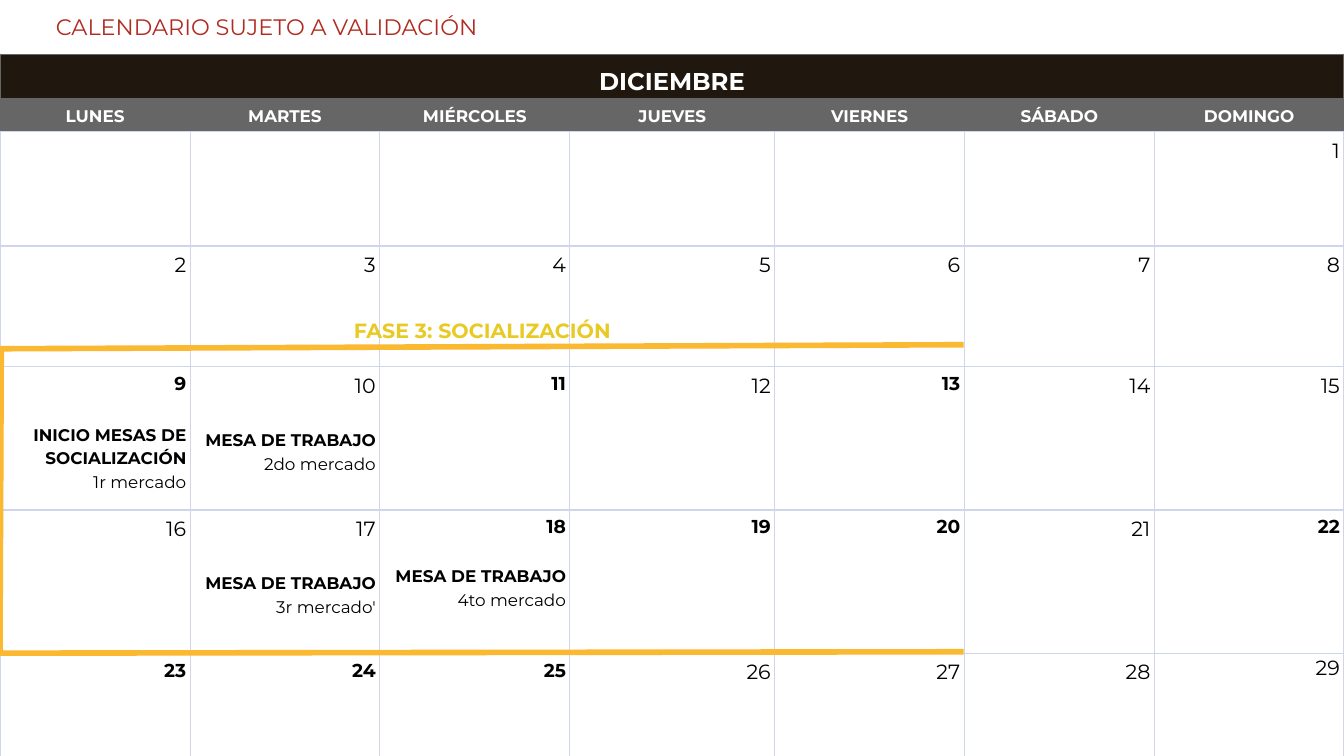
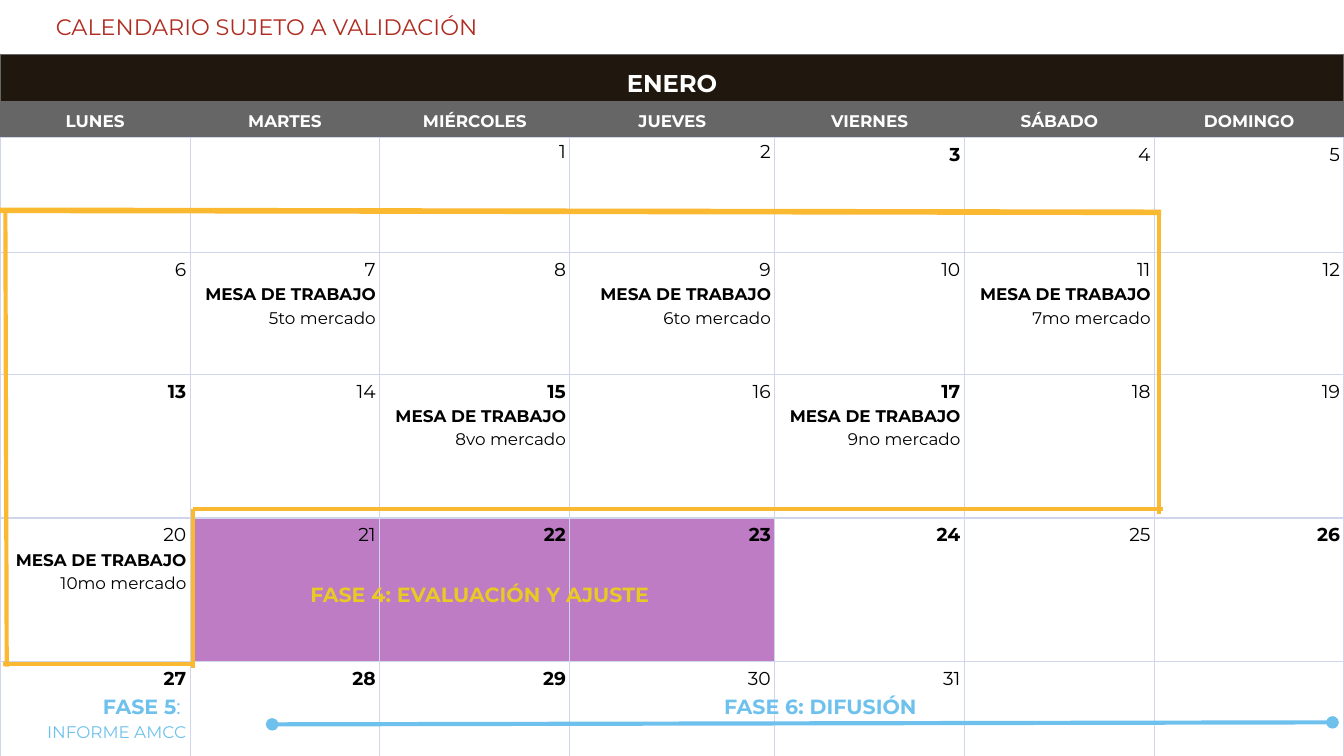
"""Build two monthly calendar slides with phase outlines and labels."""
from lxml import etree
from pptx import Presentation
from pptx.dml.color import RGBColor
from pptx.enum.shapes import MSO_CONNECTOR
from pptx.enum.text import MSO_ANCHOR, PP_ALIGN
from pptx.oxml.ns import qn
from pptx.util import Pt

PX = 4572
WIDTH, HEIGHT = 2000, 1125
FONT = "Montserrat"
CENTER, RIGHT = PP_ALIGN.CENTER, PP_ALIGN.RIGHT
TOP, MIDDLE, BOTTOM = MSO_ANCHOR.TOP, MSO_ANCHOR.MIDDLE, MSO_ANCHOR.BOTTOM
STRAIGHT = MSO_CONNECTOR.STRAIGHT
COLORS = {
    "black": "000000", "white": "FFFFFF", "month": "20180E", "gray": "666666",
    "grid": "CFD5EA", "orange": "FBB831", "yellow": "E9C924", "blue": "6EC1ED",
    "purple": "BD7CC3", "red": "B02B20",
}
STYLES = {
    "title": (12, False, "red"),
    "month": (13, True, "white"),
    "weekday": (9, True, "white"),
    "event": (9, True, "black"),
    "detail": (9, False, "black"),
    "phase": (11, True, "yellow"),
    "phase_blue": (11, True, "blue"),
    "colon_blue": (11, False, "blue"),
    "detail_blue": (9, False, "blue"),
}
WEEKDAYS = ["LUNES", "MARTES", "MIÉRCOLES", "JUEVES", "VIERNES", "SÁBADO", "DOMINGO"]
COL_WIDTHS = [283, 282, 283, 305, 282, 283, 282]
MESA = ("MESA DE TRABAJO", "event")

december_notes = {
    9: (14, [[("INICIO MESAS DE SOCIALIZACIÓN", "event")], [("1r mercado", "detail")]]),
    10: (15.4, [[("MESA DE TRABAJO ", "event"), ("2do mercado", "detail")]]),
    17: (15.4, [[MESA], [("3r mercado'", "detail")]]),
    18: (13, [[MESA], [("4to mercado", "detail")]]),
}
january_markets = {7: "5to", 9: "6to", 11: "7mo", 15: "8vo", 17: "9no", 20: "10mo"}
january_notes = {
    day: (0, [[MESA], [(f"{nth} mercado", "detail")]])
    for day, nth in january_markets.items()
}
january_notes[27] = (0, [
    [("FASE 5", "phase_blue"), (": ", "colon_blue")],
    [("INFORME AMCC", "detail_blue")],
])

MONTHS = [
    {
        "name": "DICIEMBRE", "first_col": 6, "days": 29, "day_size": 11,
        "rows": [66, 49, 170, 180, 213, 213, 180],
        "bold": {9, 11, 13, 18, 19, 20, 22, 23, 24, 25},
        "single": {29}, "shaded": set(), "notes": december_notes,
        "outline": [(1434, 513), (2, 519), (0, 972), (1434, 970)],
        "lines": [],
        "labels": [("FASE 3: SOCIALIZACIÓN", "phase", 311, 455)],
    },
    {
        "name": "ENERO", "first_col": 2, "days": 31, "day_size": 10,
        "rows": [70, 54, 171, 181, 214, 214, 196],
        "bold": {3, 13, 15, 17, 22, 23, 24, 26, 27, 28, 29},
        "single": {1, 2}, "shaded": {21, 22, 23}, "notes": january_notes,
        "outline": [],
        "lines": [
            (0, 313, 1728, 316, "orange", 3, False),
            (287, 758, 1730, 758, "orange", 2.25, False),
            (8, 312, 10, 992, "orange", 2.25, False),
            (4, 988, 286, 988, "orange", 2.25, False),
            (287, 994, 287, 758, "orange", 2.25, False),
            (1725, 312, 1725, 765, "orange", 2.25, False),
            (405, 1078, 1983, 1075, "blue", 2.25, True),
        ],
        "labels": [
            ("FASE 4: EVALUACIÓN Y AJUSTE", "phase", 307, 847),
            ("FASE 6: DIFUSIÓN", "phase_blue", 814, 1015),
        ],
    },
]


def rgb(name):
    return RGBColor.from_string(COLORS[name])


def write(p, runs, align, spacing=1.15):
    p.alignment = align
    p.line_spacing = spacing
    for text, style in runs:
        size, bold, color = STYLES.get(style, style)
        r = p.add_run()
        r.text = text
        r.font.name = FONT
        r.font.size = Pt(size)
        r.font.bold = bold
        r.font.color.rgb = rgb(color)


prs = Presentation()
prs.slide_width = WIDTH * PX
prs.slide_height = HEIGHT * PX

for month in MONTHS:
    s = prs.slides.add_slide(prs.slide_layouts[6])

    rows = month["rows"]
    frame = s.shapes.add_table(len(rows), 7, 0, 81 * PX, WIDTH * PX, sum(rows) * PX)
    table = frame.table
    table.first_row = False
    table.horz_banding = False
    for col, width in zip(table.columns, COL_WIDTHS):
        col.width = width * PX
    for row, height in zip(table.rows, rows):
        row.height = height * PX
    table.cell(0, 0).merge(table.cell(0, 6))

    for i in range(len(rows)):
        for j in range(7):
            cell = table.cell(i, j)
            cell.margin_left = cell.margin_right = 6 * PX
            cell.margin_top = cell.margin_bottom = 4 * PX
            cell.vertical_anchor = (BOTTOM, MIDDLE)[i] if i < 2 else TOP
            for side in ("lnL", "lnR", "lnT", "lnB"):
                gray = i == 0 or (i == 1 and side != "lnB")
                ln = etree.SubElement(cell._tc.get_or_add_tcPr(), qn(f"a:{side}"), w=str(Pt(0.75)))
                fill = etree.SubElement(ln, qn("a:solidFill"))
                etree.SubElement(fill, qn("a:srgbClr"), val=COLORS["gray" if gray else "grid"])

            day = (i - 2) * 7 + j - month["first_col"] + 1
            if i < 2 or day in month["shaded"]:
                cell.fill.solid()
                cell.fill.fore_color.rgb = rgb(("month", "gray")[i] if i < 2 else "purple")
            else:
                cell.fill.background()

            tf = cell.text_frame
            p = tf.paragraphs[0]
            if i == 0:
                if j == 0:
                    write(p, [(month["name"], "month")], CENTER)
            elif i == 1:
                write(p, [(WEEKDAYS[j], "weekday")], CENTER)
            elif 1 <= day <= month["days"]:
                bold = day in month["bold"]
                style = (10 if bold else month["day_size"], bold, "black")
                write(p, [(str(day), style)], RIGHT, 1.0 if day in month["single"] else 1.15)
                gap, paragraphs = month["notes"].get(day, (0, []))
                for k, runs in enumerate(paragraphs):
                    p = tf.add_paragraph()
                    p.space_before = Pt(gap if k == 0 else 0)
                    write(p, runs, RIGHT)

    if month["outline"]:
        points = month["outline"]
        builder = s.shapes.build_freeform(*points[0], scale=PX)
        builder.add_line_segments(points[1:], close=False)
        sp = builder.convert_to_shape()
        sp.shadow.inherit = False
        sp.fill.background()
        sp.line.color.rgb = rgb("orange")
        sp.line.width = Pt(3)

    for x1, y1, x2, y2, color, width, dots in month["lines"]:
        line = s.shapes.add_connector(STRAIGHT, x1 * PX, y1 * PX, x2 * PX, y2 * PX)
        line.line.color.rgb = rgb(color)
        line.line.width = Pt(width)
        etree.SubElement(line._element.spPr, qn("a:effectLst"))
        if dots:
            for end in ("headEnd", "tailEnd"):
                etree.SubElement(line.line._get_or_add_ln(), qn(f"a:{end}"), type="oval")

    title = ("CALENDARIO SUJETO A VALIDACIÓN", "title", 0, 0)
    for text, style, x, y in month["labels"] + [title]:
        width, height = (794, 80) if style == "title" else (814, 92)
        box = s.shapes.add_textbox(x * PX, y * PX, width * PX, height * PX)
        tf = box.text_frame
        tf.word_wrap = True
        tf.margin_left = tf.margin_right = tf.margin_top = tf.margin_bottom = 20 * PX
        write(tf.paragraphs[0], [(text, style)], CENTER, 1.0)

prs.save("out.pptx")
